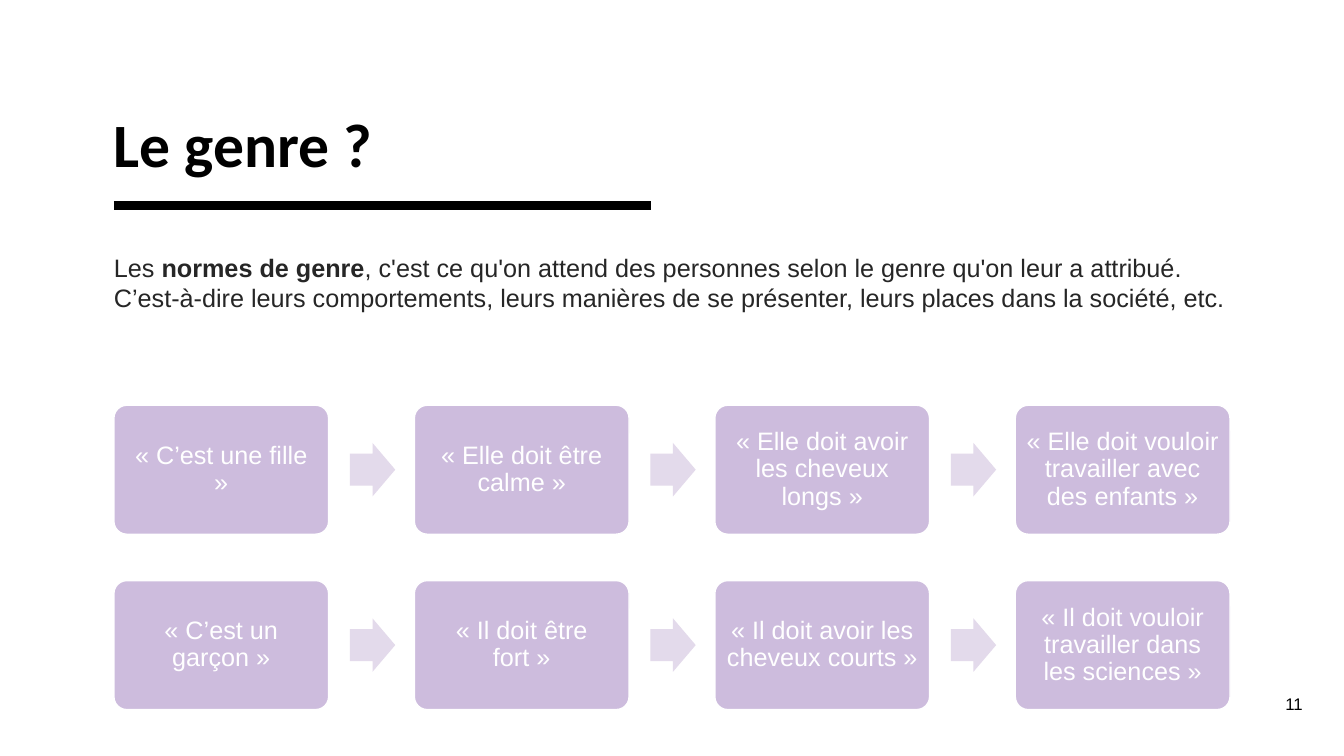
from pptx import Presentation
from pptx.dml.color import RGBColor
from pptx.enum.shapes import MSO_CONNECTOR as Conn, MSO_SHAPE as Shape
from pptx.enum.text import MSO_ANCHOR as Anchor, MSO_AUTO_SIZE as Auto, PP_ALIGN as Align
from pptx.oxml.ns import qn
from pptx.util import Inches, Pt
from lxml import etree

BLACK = RGBColor(0x00, 0x00, 0x00)
WHITE = RGBColor(0xFF, 0xFF, 0xFF)
GREY = RGBColor(0x26, 0x26, 0x26)
LILAC = RGBColor(0xCD, 0xBC, 0xDD)
PALE = RGBColor(0xE3, 0xDA, 0xEB)

TITLE = "Le genre ?"
INTRO = [
    ("Les ", False),
    ("normes de genre", True),
    (", c'est ce qu'on attend des personnes selon le genre qu'on leur a attribué. "
     "C’est-à-dire leurs comportements, leurs manières de se présenter, "
     "leurs places dans la société, etc.", False),
]
NUMBER = "11"
ROWS = [
    ["« C’est une fille »", "« Elle doit être calme »",
     "« Elle doit avoir les cheveux longs »",
     "« Elle doit vouloir travailler avec des enfants »"],
    ["« C’est un garçon »", "« Il doit être\vfort »",
     "« Il doit avoir les cheveux courts »",
     "« Il doit vouloir travailler dans les sciences »"],
]

LEFT, TOP = 1.13, 4.02
BOX_W, BOX_H = 2.13, 1.28
STEP_X, STEP_Y = 2.98, 1.74
ARROW_W, ARROW_H, ARROW_X = 0.45, 0.53, 2.34

HEAD = dict(name="Calibri", size=Pt(44), bold=True)
BODY = dict(name="Arial", size=Pt(18))
SMALL = dict(name="Arial", size=Pt(12))


def style(item, values):
    for key, value in values.items():
        setattr(item, key, value)


def write(shape, parts, font, color, frame=None, para=None, inset=0):
    text = shape.text_frame
    sides = ("margin_left", "margin_right", "margin_top", "margin_bottom")
    style(text, dict.fromkeys(sides, Inches(inset)))
    style(text, dict(word_wrap=True, auto_size=Auto.NONE) | (frame or {}))
    line = text.paragraphs[0]
    style(line, para or {})
    for words, bold in parts:
        for index, piece in enumerate(words.split("\v")):
            if index:
                line.add_line_break()
            run = line.add_run()
            run.text = piece
            style(run.font, dict(bold=bold) | font)
            run.font.color.rgb = color


def draw(shapes, kind, spot, fill, adjust):
    shape = shapes.add_shape(kind, *map(Inches, spot))
    shape.shadow.inherit = False
    shape.fill.solid()
    shape.fill.fore_color.rgb = fill
    shape.line.fill.background()
    for index, value in enumerate(adjust):
        shape.adjustments[index] = value
    return shape


def main():
    deck = Presentation()
    style(deck, dict(slide_width=Inches(13.33), slide_height=Inches(7.5)))
    shapes = deck.slides.add_slide(deck.slide_layouts[5]).shapes

    rule = shapes.add_connector(Conn.STRAIGHT, *map(Inches, (1.13, 2.04, 6.46, 2.04)))
    rule.line.color.rgb = BLACK
    rule.line.width = Pt(6)
    etree.SubElement(rule._element.spPr, qn("a:effectLst"))

    title = shapes.title
    style(title, dict(left=Inches(LEFT), top=Inches(1.08),
                      width=Inches(5.33), height=Inches(0.71)))
    write(title, [(TITLE, True)], HEAD, BLACK, dict(vertical_anchor=Anchor.BOTTOM),
          dict(alignment=Align.LEFT, line_spacing=0.9))

    intro = shapes.add_textbox(*map(Inches, (LEFT, 2.5, 11.08, 1.2)))
    write(intro, INTRO, BODY, GREY, para=dict(space_before=Pt(10)))

    number = shapes.add_textbox(*map(Inches, (12.57, 6.88, 0.35, 0.2)))
    write(number, [(NUMBER, False)], SMALL, BLACK, dict(vertical_anchor=Anchor.MIDDLE),
          dict(alignment=Align.RIGHT))

    for row, names in enumerate(ROWS):
        y = TOP + row * STEP_Y
        for col, words in enumerate(names):
            x = LEFT + col * STEP_X
            box = draw(shapes, Shape.ROUNDED_RECTANGLE, (x, y, BOX_W, BOX_H), LILAC, [0.1])
            box.line.color.rgb = WHITE
            box.line.width = Pt(1)
            write(box, [(words, False)], BODY, WHITE, dict(vertical_anchor=Anchor.MIDDLE),
                  dict(alignment=Align.CENTER, line_spacing=0.9), 0.07)
            if col < len(names) - 1:
                spot = (x + ARROW_X, y + (BOX_H - ARROW_H) / 2, ARROW_W, ARROW_H)
                draw(shapes, Shape.RIGHT_ARROW, spot, PALE, [0.6, 0.5])

    deck.save("out.pptx")


if __name__ == "__main__":
    main()
